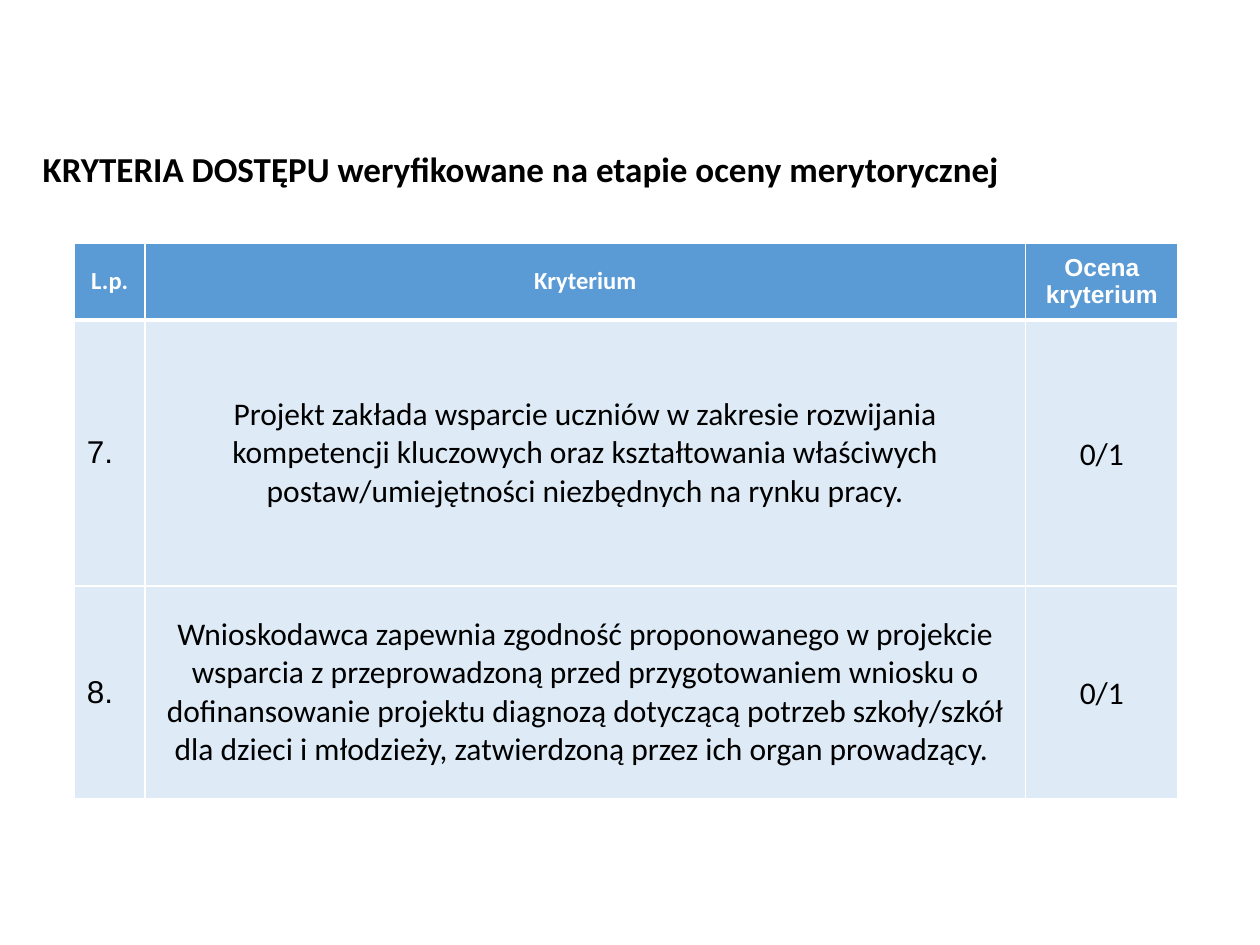
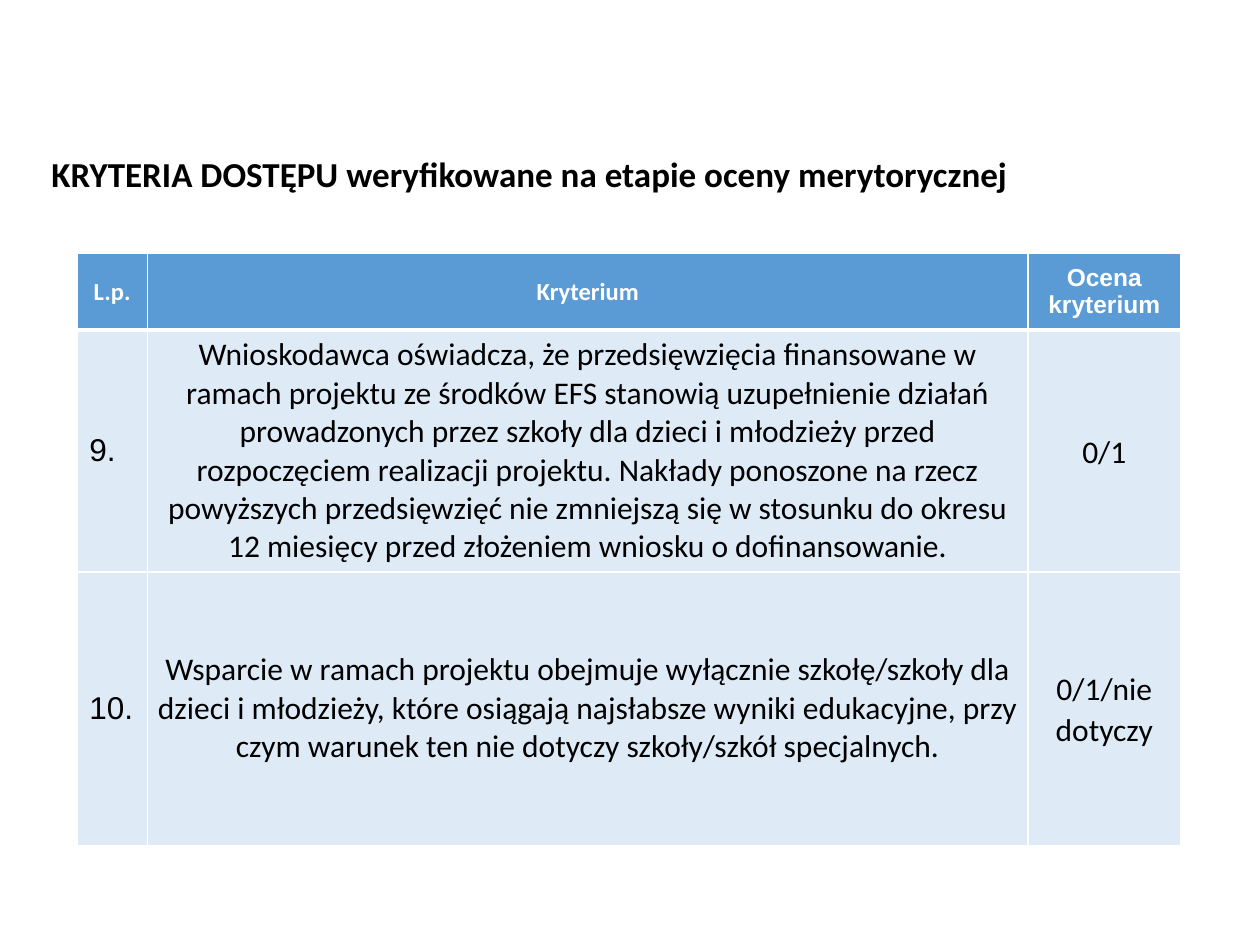
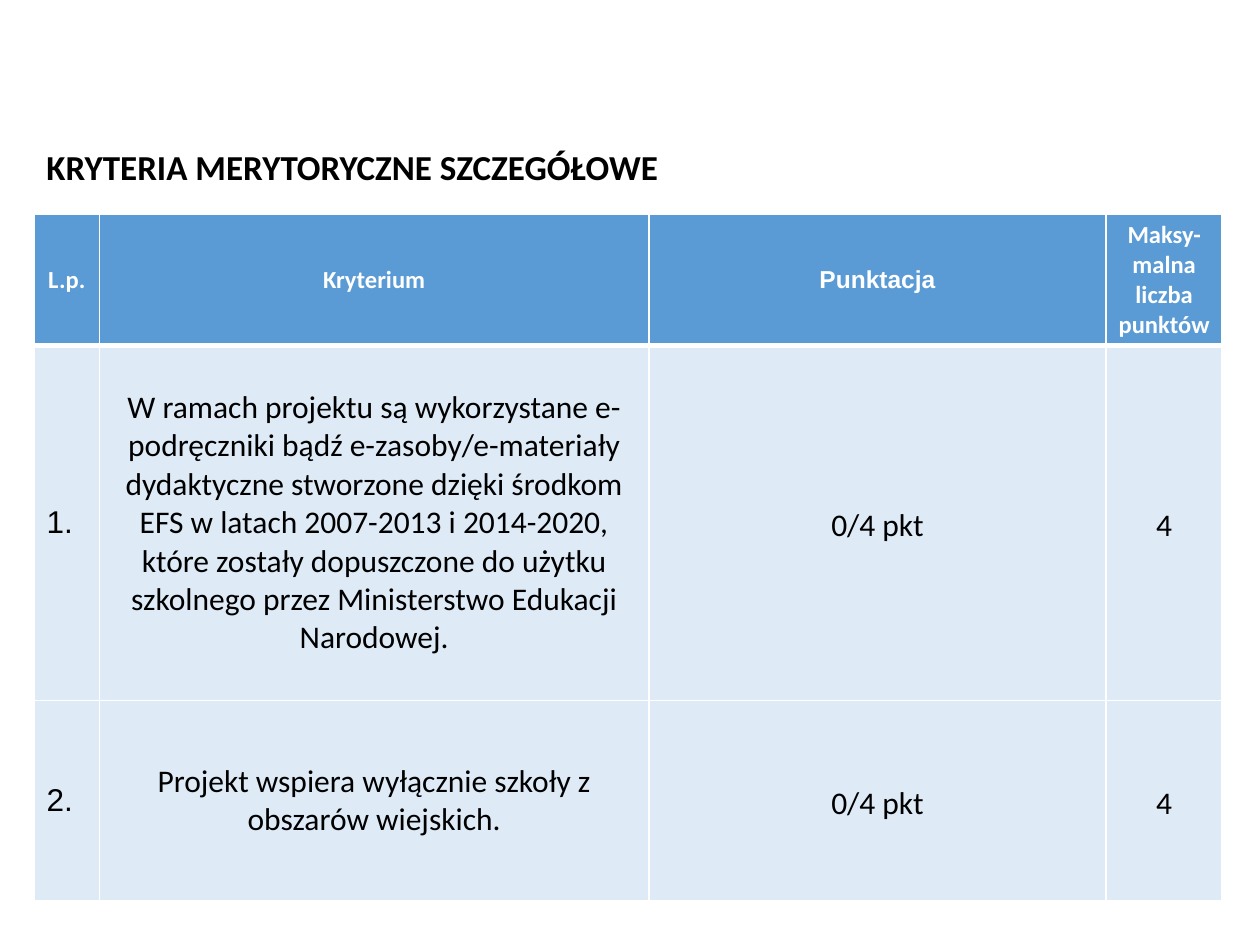
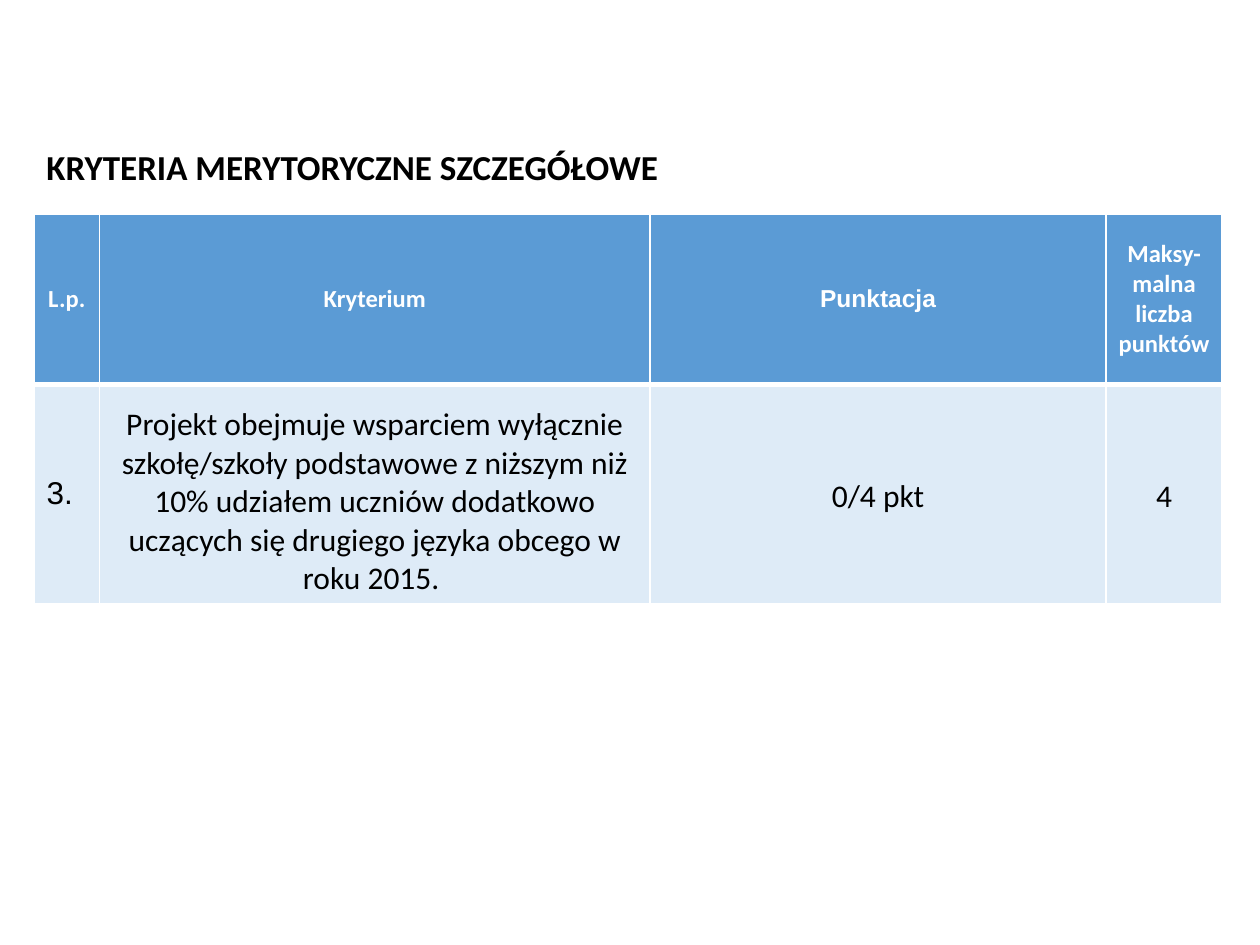
from lxml.etree import SubElement
from pptx import Presentation
from pptx.dml.color import RGBColor
from pptx.enum.text import MSO_ANCHOR, MSO_AUTO_SIZE, PP_ALIGN
from pptx.oxml.ns import qn
from pptx.util import Inches, Pt

BLACK = RGBColor(0x00, 0x00, 0x00)
WHITE = RGBColor(0xFF, 0xFF, 0xFF)
HEADER_BLUE = RGBColor(0x5B, 0x9B, 0xD5)
ROW_BLUE = RGBColor(0xDE, 0xEB, 0xF7)

ACCESS_TITLE = "KRYTERIA DOSTĘPU weryfikowane na etapie oceny merytorycznej"
DETAIL_TITLE = "KRYTERIA MERYTORYCZNE SZCZEGÓŁOWE"
ACCESS_HEADER = ["L.p.", "Kryterium", "Ocena kryterium"]
DETAIL_HEADER = ["L.p.", "Kryterium", "Punktacja", "Maksy-malna liczba punktów"]
ARIAL_HEADERS = {"Ocena kryterium", "Punktacja"}

# Cell insets: left, top, right, bottom
HEADER = (0.09, 0.05, 0.09, 0.05)
WIDE = (0.1, 0.05, 0.1, 0.05)
NARROW = (0.04, 0.04, 0.04, 0.04)
LOWERED = (0.04, 0.17, 0.04, 0.04)

# Content of the pages
PAGES = [
    dict(
        title=ACCESS_TITLE, title_at=(0.24, 1.12, 9.11, 0.44), title_wrap=True,
        table_at=(0.59, 1.93), columns=[0.56, 6.99, 1.21], heights=[0.61, 2.11, 1.69],
        header=ACCESS_HEADER, criterion_insets=WIDE, score_spacing=1.07,
        rows=[
            ["7.", "Projekt zakłada wsparcie uczniów w zakresie rozwijania kompetencji "
             "kluczowych oraz kształtowania właściwych postaw/umiejętności niezbędnych "
             "na rynku pracy.", "0/1"],
            ["8.", "Wnioskodawca zapewnia zgodność proponowanego w projekcie wsparcia "
             "z przeprowadzoną przed przygotowaniem wniosku o dofinansowanie projektu "
             "diagnozą dotyczącą potrzeb szkoły/szkół dla dzieci i młodzieży, "
             "zatwierdzoną przez ich organ prowadzący. ", "0/1"],
        ],
    ),
    dict(
        title=ACCESS_TITLE, title_at=(0.31, 1.16, 9.06, 0.44), title_wrap=True,
        table_at=(0.61, 2.01), columns=[0.56, 6.99, 1.21], heights=[0.61, 1.92, 2.17],
        header=ACCESS_HEADER, criterion_insets=NARROW, score_spacing=1.07,
        rows=[
            ["9.", "Wnioskodawca oświadcza, że przedsięwzięcia finansowane w ramach "
             "projektu ze środków EFS stanowią uzupełnienie działań prowadzonych przez "
             "szkoły dla dzieci i młodzieży przed rozpoczęciem realizacji projektu. "
             "Nakłady ponoszone na rzecz powyższych przedsięwzięć nie zmniejszą się "
             "w stosunku do okresu 12 miesięcy przed złożeniem wniosku "
             "o dofinansowanie.", "0/1"],
            ["10.", "Wsparcie w ramach projektu obejmuje wyłącznie szkołę/szkoły dla "
             "dzieci i młodzieży, które osiągają najsłabsze wyniki edukacyjne, przy "
             "czym warunek ten nie dotyczy szkoły/szkół specjalnych.",
             "0/1/nie dotyczy"],
        ],
    ),
    dict(
        title=DETAIL_TITLE, title_at=(0.27, 1.1, 5.18, 0.44), title_wrap=False,
        table_at=(0.27, 1.7), columns=[0.52, 4.36, 3.63, 0.92], heights=[1.04, 2.82, 1.59],
        header=DETAIL_HEADER, criterion_insets=NARROW, score_spacing=1.15,
        rows=[
            ["1.", "W ramach projektu są wykorzystane e-podręczniki bądź "
             "e-zasoby/e-materiały dydaktyczne stworzone dzięki środkom EFS w latach "
             "2007-2013 i 2014-2020, które zostały dopuszczone do użytku szkolnego "
             "przez Ministerstwo Edukacji Narodowej.", "0/4 pkt", "4"],
            ["2.", "Projekt wspiera wyłącznie szkoły z obszarów wiejskich.",
             "0/4 pkt", "4"],
        ],
    ),
    dict(
        title=DETAIL_TITLE, title_at=(0.27, 1.1, 5.18, 0.44), title_wrap=False,
        table_at=(0.27, 1.7), columns=[0.52, 4.37, 3.62, 0.92], heights=[1.35, 1.74],
        header=DETAIL_HEADER, criterion_insets=LOWERED, score_spacing=1.15,
        rows=[
            ["3.", "Projekt obejmuje wsparciem wyłącznie szkołę/szkoły podstawowe "
             "z niższym niż 10% udziałem uczniów dodatkowo uczących się drugiego "
             "języka obcego w roku 2015. ", "0/4 pkt", "4"],
        ],
    ),
]


def write(frame, text, size=18, font="Calibri", color=BLACK, bold=False,
          align=PP_ALIGN.CENTER, spacing=None):
    para = frame.paragraphs[0]
    para.alignment = align
    para.line_spacing = spacing
    span = para.add_run()
    span.text = text
    span.font.size = Pt(size)
    span.font.name = font
    span.font.color.rgb = color
    span.font.bold = bold


def style_cell(cell, fill, insets, top=1, bottom=1):
    cell.vertical_anchor = MSO_ANCHOR.MIDDLE
    cell.margin_left, cell.margin_top, cell.margin_right, cell.margin_bottom = map(Inches, insets)
    properties = cell._tc.get_or_add_tcPr()
    for side, width in (("L", 1), ("R", 1), ("T", top), ("B", bottom)):
        line = SubElement(properties, qn(f"a:ln{side}"), w=str(Pt(width)))
        paint = SubElement(line, qn("a:solidFill"))
        SubElement(paint, qn("a:srgbClr"), val=str(WHITE))
    cell.fill.solid()
    cell.fill.fore_color.rgb = fill


deck = Presentation()
deck.slide_width, deck.slide_height = Inches(10), Inches(7.5)

for content in PAGES:
    page = deck.slides.add_slide(deck.slide_layouts[6])

    # Criteria table
    columns, heights = content["columns"], content["heights"]
    left, top = content["table_at"]
    table = page.shapes.add_table(
        len(heights), len(columns), Inches(left), Inches(top),
        Inches(sum(columns)), Inches(sum(heights))).table
    table.horz_banding = False
    for column, width in zip(table.columns, columns):
        column.width = Inches(width)
    for row, height in zip(table.rows, heights):
        row.height = Inches(height)

    # Header row
    for index, label in enumerate(content["header"]):
        cell = table.cell(0, index)
        style_cell(cell, HEADER_BLUE, HEADER, bottom=3)
        write(cell.text_frame, label, size=14, color=WHITE, bold=True,
              font="Arial" if label in ARIAL_HEADERS else "Calibri")

    # Criterion rows: number, criterion, then scores
    for row_index, values in enumerate(content["rows"], start=1):
        for index, value in enumerate(values):
            cell = table.cell(row_index, index)
            insets = (WIDE, content["criterion_insets"], NARROW, NARROW)[index]
            style_cell(cell, ROW_BLUE, insets, top=3 if row_index == 1 else 1)
            if index == 0:
                write(cell.text_frame, value, font="Arial", align=PP_ALIGN.LEFT)
            else:
                write(cell.text_frame, value,
                      spacing=content["score_spacing"] if index > 1 else None)

    # Title
    box = page.shapes.add_textbox(*map(Inches, content["title_at"]))
    frame = box.text_frame
    frame.word_wrap = content["title_wrap"]
    frame.auto_size = MSO_AUTO_SIZE.SHAPE_TO_FIT_TEXT
    frame.vertical_anchor = MSO_ANCHOR.MIDDLE
    write(frame, content["title"], size=20, bold=True, align=PP_ALIGN.LEFT)

deck.save("out.pptx")
